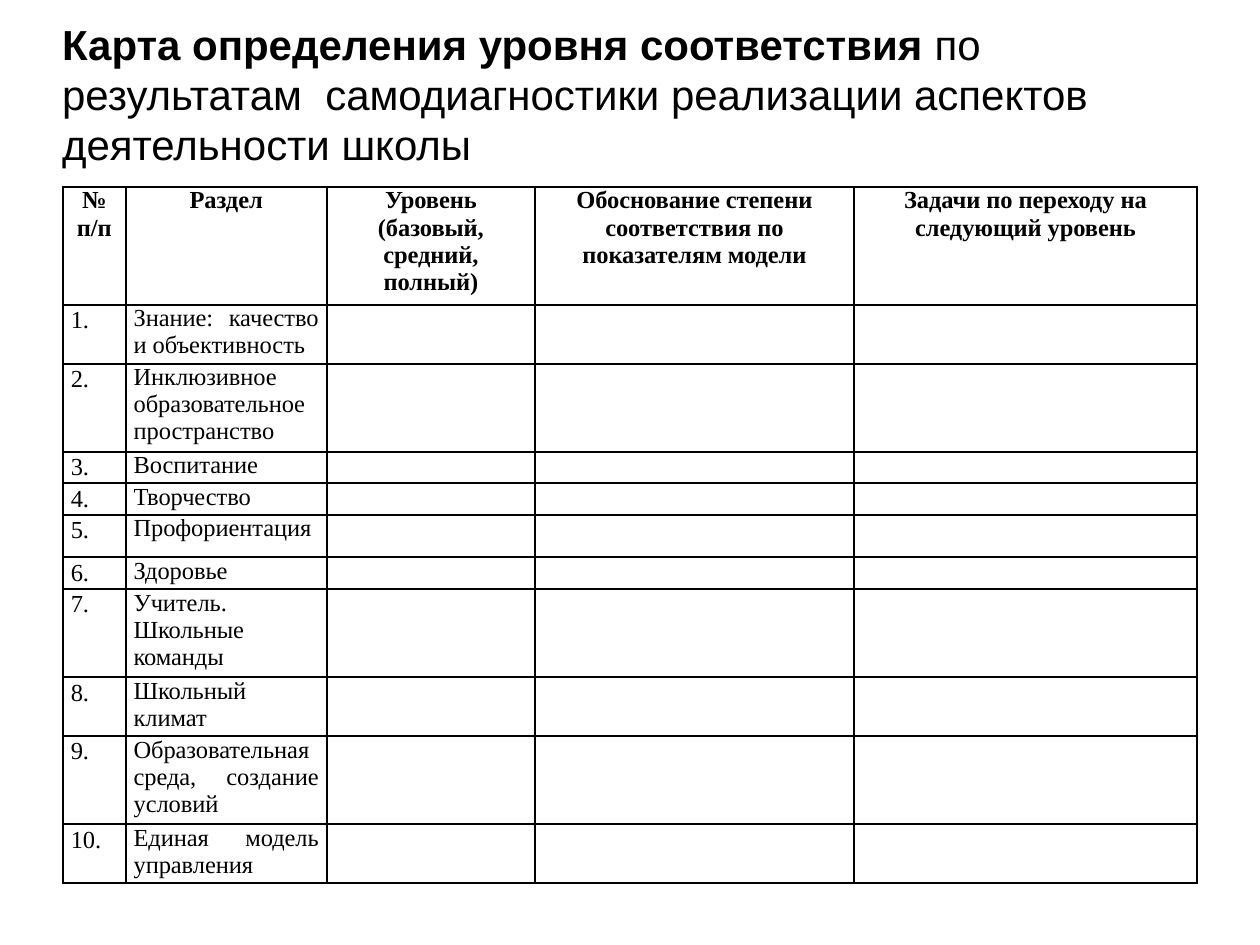
import pptx
import pptx.dml.color
import pptx.enum.text
import pptx.oxml.ns
import pptx.util
from lxml import etree

Cm, Pt = pptx.util.Cm, pptx.util.Pt
ALIGN = pptx.enum.text.PP_ALIGN

# Content
TITLE = [
    ("Карта определения уровня соответствия ", True),
    ("по результатам  самодиагностики реализации аспектов деятельности школы", False),
]
HEADINGS = [
    "№ п/п",
    "Раздел",
    "Уровень (базовый, средний, полный)",
    "Обоснование степени соответствия по показателям модели",
    "Задачи по переходу на следующий уровень",
]
SECTIONS = [
    "Знание: качество и объективность",
    "Инклюзивное образовательное пространство",
    "Воспитание",
    "Творчество",
    "Профориентация",
    "Здоровье",
    "Учитель. Школьные команды",
    "Школьный климат",
    "Образовательная среда, создание условий",
    "Единая модель управления",
]
COLUMN_WIDTHS = [0.95, 3.04, 3.15, 4.82, 5.19]
ROW_HEIGHTS = [1.77, 0.89, 1.33, 0.48, 0.48, 0.64, 0.48, 1.33, 0.89, 1.33, 0.89]
INK, PAPER = "000000", "FFFFFF"
TABLE_SIZE = 10.5


def color(code):
    return pptx.dml.color.RGBColor.from_string(code)


def style(font, name, size, bold):
    font.name, font.size, font.bold = name, Pt(size), bold
    font.color.rgb = color(INK)


def add_borders(cell):
    properties = cell._tc.get_or_add_tcPr()
    for side in ("lnL", "lnR", "lnT", "lnB"):
        border = etree.SubElement(properties, pptx.oxml.ns.qn("a:" + side), w=str(Pt(1)))
        fill = etree.SubElement(border, pptx.oxml.ns.qn("a:solidFill"))
        etree.SubElement(fill, pptx.oxml.ns.qn("a:srgbClr"), val=INK)


def fill_cell(cell, text, row, column):
    add_borders(cell)
    cell.fill.solid()
    cell.fill.fore_color.rgb = color(PAPER)
    cell.margin_left = cell.margin_right = Cm(0.12)
    cell.margin_top = cell.margin_bottom = 0
    paragraph = cell.text_frame.paragraphs[0]
    if not text:
        # An empty cell keeps the table text size, so its row stays low
        etree.SubElement(paragraph._p, pptx.oxml.ns.qn("a:endParaRPr"),
                         sz=str(int(TABLE_SIZE * 100)))
        return
    paragraph.text = text
    paragraph.alignment = ALIGN.CENTER if row == 0 else ALIGN.JUSTIFY
    if row and column == 0:
        paragraph.line_spacing = 1.07
        paragraph.space_after = Pt(8)
    style(paragraph.font, "Times New Roman", TABLE_SIZE, row == 0)


presentation = pptx.Presentation()
presentation.slide_width, presentation.slide_height = Cm(19.05), Cm(14.29)
slide = presentation.slides.add_slide(presentation.slide_layouts[6])

# Title
title = slide.shapes.add_textbox(Cm(0.69), Cm(0.15), Cm(16.38), Cm(2.57)).text_frame
title.word_wrap = True
title.auto_size = pptx.enum.text.MSO_AUTO_SIZE.SHAPE_TO_FIT_TEXT
for text, bold in TITLE:
    run = title.paragraphs[0].add_run()
    run.text = text
    style(run.font, "Arial", 18, bold)

# Table of sections
rows = [HEADINGS] + [[f"{number}.", section, "", "", ""]
                     for number, section in enumerate(SECTIONS, 1)]
level_map = slide.shapes.add_table(
    len(rows), len(HEADINGS), Cm(0.95), Cm(2.83),
    Cm(sum(COLUMN_WIDTHS)), Cm(sum(ROW_HEIGHTS))).table
level_map.horz_banding = False
for column, width in zip(level_map.columns, COLUMN_WIDTHS):
    column.width = Cm(width)
for r, (texts, height) in enumerate(zip(rows, ROW_HEIGHTS)):
    level_map.rows[r].height = Cm(height)
    for c, text in enumerate(texts):
        fill_cell(level_map.cell(r, c), text, r, c)

presentation.save("out.pptx")
